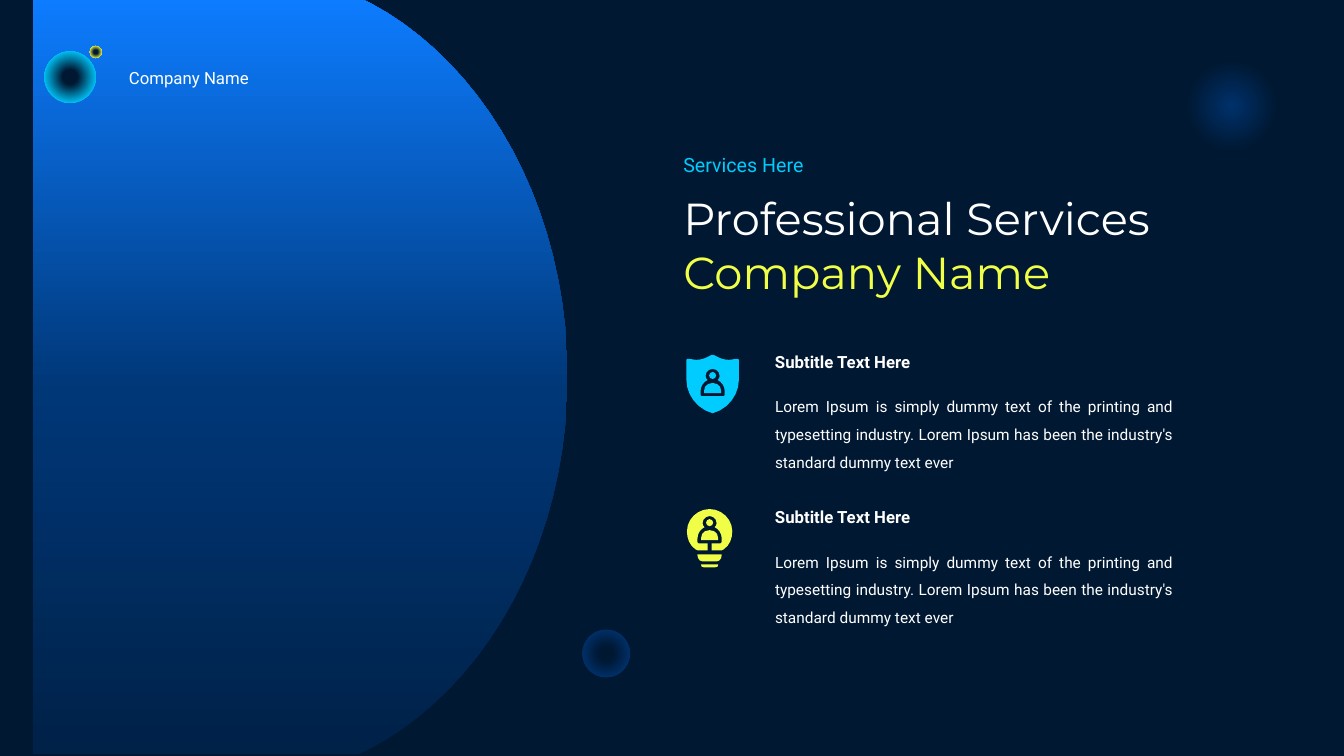
from math import dist, sqrt

from pptx import Presentation
from pptx.dml.color import RGBColor
from pptx.enum.shapes import MSO_SHAPE
from pptx.enum.text import MSO_AUTO_SIZE, PP_ALIGN
from pptx.oxml import parse_xml
from pptx.oxml.ns import nsdecls, qn
from pptx.util import Pt

COLORS = {"night": "001832", "deep": "002148", "navy": "003777", "blue": "0D7CFF",
          "glow": "00316B", "cyan": "00CCFF", "yellow": "F0FE47", "white": "FFFFFF"}
GRID = 0.72      # points per drawing unit of the outlines


def outline(contours, center, top):
    """Freeform from contours: pairs are corners, sextets are Bezier curves."""
    builder = None
    for contour in contours:
        points = [contour[0]]
        for step in contour[1:]:
            if len(step) == 2:
                points.append(step)
                continue
            x0, y0 = points[-1]
            x1, y1, x2, y2, x3, y3 = step
            pieces = max(1, round(sqrt(dist((x0, y0), (x3, y3)))))  # longer curves get more
            for i in range(1, pieces + 1):
                t = i / pieces
                a, b, c, d = (1 - t) ** 3, 3 * t * (1 - t) ** 2, 3 * t * t * (1 - t), t ** 3
                points.append((a * x0 + b * x1 + c * x2 + d * x3,
                               a * y0 + b * y1 + c * y2 + d * y3))
        placed = [(Pt((center + x) * GRID), Pt((top + y) * GRID)) for x, y in points]
        if builder is None:
            builder = slide.shapes.build_freeform(*placed[0])
        else:
            builder.move_to(*placed[0])
        builder.add_line_segments(placed[1:], close=True)
    shape = builder.convert_to_shape()
    shape.shadow.inherit = False
    shape.line.fill.background()
    return shape


def blend(shape, stops, direction):
    """Gradient fill from (percent, color) stops."""
    marks = "".join(f'<a:gs pos="{pos * 1000}"><a:srgbClr val="{COLORS[color]}"/></a:gs>'
                    for pos, color in stops)
    shape.fill.gradient()
    plain = shape.element.spPr.find(qn("a:gradFill"))
    plain.getparent().replace(plain, parse_xml(
        f'<a:gradFill {nsdecls("a")} rotWithShape="1"><a:gsLst>{marks}</a:gsLst>{direction}</a:gradFill>'))


UPWARD = '<a:lin ang="16200000" scaled="0"/>'
RADIAL = '<a:path path="circle"><a:fillToRect l="50000" t="50000" r="50000" b="50000"/></a:path>'

deck = Presentation()
deck.slide_width, deck.slide_height = Pt(960), Pt(540)
slide = deck.slides.add_slide(deck.slide_layouts[6])
slide.background.fill.solid()
slide.background.fill.fore_color.rgb = RGBColor.from_string(COLORS["night"])

# Rounded panel on the left
panel = outline([[(356, -2), (33, -2), (33, 748), (356, 748), (367, 743),
                  (482, 682, 563, 540, 563, 373), (563, 207, 482, 64, 367, 3)]], 0, 0)
blend(panel, [(0, "deep"), (48, "navy"), (100, "blue")], UPWARD)

# Icon outlines, measured from the top centre of the person
person = [(-2, 27), (-11, 27), (-12, 26), (-12, 22),
          (-12, 17, -9, 13, -5, 11), (-6, 10, -7, 9, -7, 7), (-7, 3, -4, 0, 0, 0),
          (4, 0, 7, 3, 7, 7), (7, 9, 6, 10, 5, 11), (9, 13, 12, 17, 12, 22),
          (12, 26), (11, 27), (2, 27)]
head = [(0, 3), (-2, 3, -3.5, 5, -3.5, 6.5), (-3.5, 8.5, -2, 10, 0, 10),
        (2, 10, 3.5, 8.5, 3.5, 6.5), (3.5, 5, 2, 3, 0, 3)]
torso = [(-8.5, 24), (-8.5, 22), (-8.5, 17, -5, 14, 0, 14),
         (5, 14, 8.5, 17, 8.5, 22), (8.5, 24)]
shield = [(0, -14), (-1, -14), (-6, -11, -11, -9, -16, -9), (-19, -9, -21, -10, -24, -10),
          (-25, -10), (-26, -9), (-26, 11), (-26, 26, -15, 40, 0, 44),
          (15, 40, 26, 26, 26, 11), (26, -9), (25, -10), (24, -10),
          (21, -10, 19, -9, 16, -9), (11, -9, 6, -11, 1, -14)]
bulb = [(0, -7), (-12, -7, -22.5, 3, -22.5, 15), (-22.5, 22, -20, 29, -14, 33),
        (-12, 34), (-2, 34), *person, (2, 34), (12, 34), (14, 33),
        (20, 29, 22.5, 22, 22.5, 15), (22.5, 3, 12, -7, 0, -7)]
socket = [(-12, 38), (-12, 39), (-12, 42, -10, 45, -7, 45), (7, 45),
          (10, 45, 12, 42, 12, 39), (12, 38)]
tip = [(-8.5, 48), (-8.5, 50, -8, 51, -5, 51), (5, 51), (8, 51, 8.5, 50, 8.5, 48)]

icons = [("cyan", 707, 366, [[shield, person], [head], [torso]]),
         ("yellow", 704, 512, [[bulb], [head], [torso], [socket], [tip]])]
for color, center, top, parts in icons:
    for contours in parts:
        part = outline(contours, center, top)
        part.fill.solid()
        part.fill.fore_color.rgb = RGBColor.from_string(COLORS[color])

# Glowing circles: left, top, diameter, gradient stops
circles = [(31.7, 36.7, 36.8, [(1, "night"), (20, "night"), (75, "cyan")]),
           (64.1, 32.8, 8.7, [(0, "night"), (20, "night"), (75, "yellow")]),
           (840.2, 36, 79.2, [(0, "glow"), (59, "night")]),
           (416, 449.8, 34, [(0, "night"), (20, "night"), (75, "glow")])]
for left, top, size, stops in circles:
    circle = slide.shapes.add_shape(MSO_SHAPE.OVAL, Pt(left), Pt(top), Pt(size), Pt(size))
    circle.shadow.inherit = False
    circle.line.fill.background()
    blend(circle, stops, RADIAL)

# Texts: left, top, width, height, font, size, bold, justified, (line, color) pairs
LOREM = ("Lorem Ipsum is simply dummy text of the printing and typesetting industry. "
         "Lorem Ipsum has been the industry's standard dummy text ever")
texts = [(85, 44.5, 129.6, 21.8, "Roboto", 12, False, False, [("Company Name", "white")]),
         (481, 105.8, 138.2, 24.2, "Roboto", 14, False, False, [("Services Here", "cyan")]),
         (481, 132.5, 437, 85, "Montserrat", 32, False, False,
          [("Professional Services", "white"), ("Company Name", "yellow")])]
for service in range(2):
    top = 247.6 + 111 * service
    texts += [(546.5, top, 204.5, 21.8, "Roboto", 12, True, False, [("Subtitle Text Here", "white")]),
              (546.5, top + 26, 298.8, 65, "Roboto", 11, False, True, [(LOREM, "white")])]

for left, top, width, height, font, size, bold, justified, lines in texts:
    frame = slide.shapes.add_textbox(Pt(left), Pt(top), Pt(width), Pt(height)).text_frame
    frame.word_wrap = True
    frame.auto_size = MSO_AUTO_SIZE.SHAPE_TO_FIT_TEXT
    for i, (line, color) in enumerate(lines):
        paragraph = frame.add_paragraph() if i else frame.paragraphs[0]
        paragraph.text = line
        paragraph.font.name, paragraph.font.size, paragraph.font.bold = font, Pt(size), bold
        paragraph.font.color.rgb = RGBColor.from_string(COLORS[color])
        if justified:
            paragraph.alignment = PP_ALIGN.JUSTIFY
            paragraph.line_spacing = 1.5

deck.save("out.pptx")
